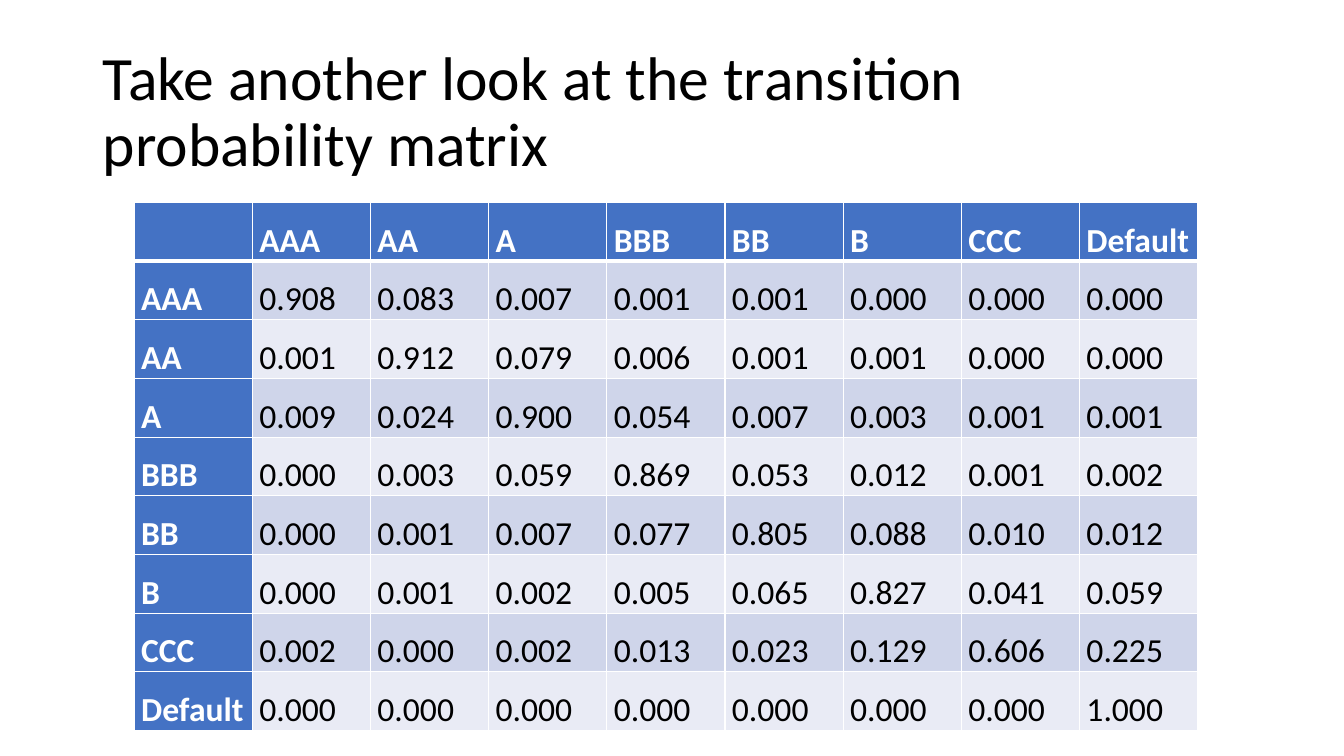
from lxml.etree import SubElement
from pptx import Presentation
from pptx.dml.color import RGBColor
from pptx.enum.text import MSO_ANCHOR, MSO_AUTO_SIZE, PP_ALIGN
from pptx.oxml.ns import qn
from pptx.util import Inches, Pt

# Content
TITLE = "Take another look at the transition probability matrix"
RATINGS = ["AAA", "AA", "A", "BBB", "BB", "B", "CCC", "Default"]
PROBABILITIES = [
    [0.908, 0.083, 0.007, 0.001, 0.001, 0.000, 0.000, 0.000],
    [0.001, 0.912, 0.079, 0.006, 0.001, 0.001, 0.000, 0.000],
    [0.009, 0.024, 0.900, 0.054, 0.007, 0.003, 0.001, 0.001],
    [0.000, 0.003, 0.059, 0.869, 0.053, 0.012, 0.001, 0.002],
    [0.000, 0.001, 0.007, 0.077, 0.805, 0.088, 0.010, 0.012],
    [0.000, 0.001, 0.002, 0.005, 0.065, 0.827, 0.041, 0.059],
    [0.002, 0.000, 0.002, 0.013, 0.023, 0.129, 0.606, 0.225],
    [0.000, 0.000, 0.000, 0.000, 0.000, 0.000, 0.000, 1.000],
]

# Style
FONT = "Calibri"
BLACK = RGBColor(0x00, 0x00, 0x00)
WHITE = RGBColor(0xFF, 0xFF, 0xFF)
HEADER = RGBColor(0x44, 0x72, 0xC4)
BANDS = [RGBColor(0xE9, 0xEB, 0xF5), RGBColor(0xCF, 0xD5, 0xEA)]


def set_font(p, size, color, bold):
    p.font.name = FONT
    p.font.size = Pt(size)
    p.font.color.rgb = color
    p.font.bold = bold


def set_borders(cell, top, bottom):
    tc_pr = cell._tc.get_or_add_tcPr()
    for side, width in (("L", 1), ("R", 1), ("T", top), ("B", bottom)):
        ln = SubElement(tc_pr, qn(f"a:ln{side}"), w=str(Pt(width)))
        fill = SubElement(ln, qn("a:solidFill"))
        SubElement(fill, qn("a:srgbClr"), val=str(WHITE))


def format_cell(cell, text, is_header, fill, top, bottom):
    set_borders(cell, top, bottom)
    cell.fill.solid()
    cell.fill.fore_color.rgb = fill
    cell.vertical_anchor = MSO_ANCHOR.BOTTOM
    cell.margin_left = cell.margin_right = Inches(0.07)
    cell.margin_top = cell.margin_bottom = 0
    cell.text = text
    p = cell.text_frame.paragraphs[0]
    p.line_spacing = 1.07
    p.space_after = Pt(8)
    set_font(p, 24, WHITE if is_header else BLACK, is_header)


prs = Presentation()
prs.slide_width, prs.slide_height = Inches(13.33), Inches(7.5)
s = prs.slides.add_slide(prs.slide_layouts[5])

# Title
sp = s.shapes.title
sp.left, sp.top = Inches(0.92), Inches(0.4)
sp.width, sp.height = Inches(11.5), Inches(1.45)
tf = sp.text_frame
tf.text = TITLE
tf.word_wrap = True
tf.auto_size = MSO_AUTO_SIZE.NONE
tf.vertical_anchor = MSO_ANCHOR.MIDDLE
p = tf.paragraphs[0]
p.alignment = PP_ALIGN.LEFT
p.line_spacing = 0.9
set_font(p, 44, BLACK, False)

# Transition matrix: ratings label both the rows and the columns
rows = [[""] + RATINGS]
for rating, values in zip(RATINGS, PROBABILITIES):
    rows.append([rating] + [f"{value:.3f}" for value in values])
n = len(rows)
table = s.shapes.add_table(
    n, n, Inches(1.33), Inches(2.01), Inches(10.55), Inches(5.24)).table
table.first_col = True
for i, row in enumerate(rows):
    top, bottom = (3 if i == 1 else 1), (3 if i == 0 else 1)
    for j, text in enumerate(row):
        is_header = i == 0 or j == 0
        fill = HEADER if is_header else BANDS[i % 2]
        format_cell(table.cell(i, j), text, is_header, fill, top, bottom)

prs.save("out.pptx")
